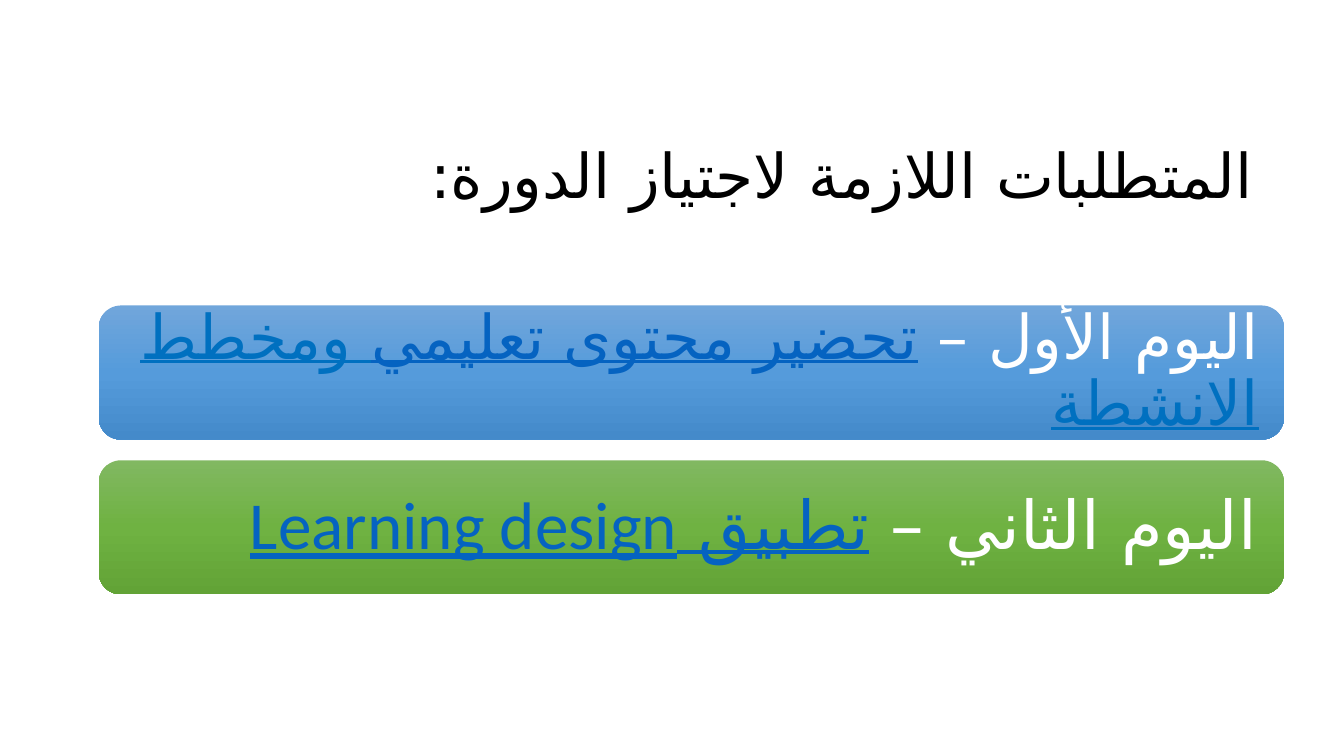
from copy import deepcopy

from pptx import Presentation
from pptx.dml.color import RGBColor
from pptx.enum.shapes import MSO_SHAPE
from pptx.enum.text import MSO_ANCHOR, PP_ALIGN
from pptx.oxml.ns import qn
from pptx.util import Pt

COLORS = {
    "black": "000000",
    "white": "FFFFFF",
    "link": "0563C1",
    "plan": "0070C0",
}
LATIN_FONT, ARABIC_FONT = "Calibri", "DejaVu Sans"
TITLE = [("المتطلبات اللازمة لاجتياز الدورة:", "black", False)]
DAYS = [
    {
        "runs": [
            ("اليوم الأول – ", "white", False),
            ("تحضير محتوى تعليمي", "link", True),
            (" ومخطط الانشطة", "plan", True),
        ],
        "size": 44,
        "inset": 13,
        "gradient": ["71A6DB", "559BDB", "448ACA"],
    },
    {
        "runs": [
            ("اليوم الثاني – ", "white", False),
            ("تطبيق Learning design", "link", True),
        ],
        "size": 48,
        "inset": 14.4,
        "gradient": ["81B861", "6FB242", "62A336"],
    },
]
BAR_LEFT, BAR_TOP, BAR_WIDTH, BAR_HEIGHT = 70.5, 218.2, 846.7, 95.8
BAR_GAP = 14.8


def write_text(box, runs, size, anchor, inset_x=7.2, inset_y=3.6):
    frame = box.text_frame
    frame.word_wrap = True
    frame.vertical_anchor = anchor
    frame.margin_left = frame.margin_right = Pt(inset_x)
    frame.margin_top = frame.margin_bottom = Pt(inset_y)
    para = frame.paragraphs[0]
    para.alignment = PP_ALIGN.RIGHT
    para.line_spacing = 0.9
    para._p.get_or_add_pPr().set("rtl", "1")
    for text, color, underline in runs:
        span = para.add_run()
        span.text = text
        span.font.size = Pt(size)
        span.font.name = LATIN_FONT
        span.font.underline = underline
        span.font.color.rgb = RGBColor.from_string(COLORS[color])
        complex_font = span._r.rPr.makeelement(qn("a:cs"), {"typeface": ARABIC_FONT})
        span._r.rPr.find(qn("a:latin")).addnext(complex_font)


def fill_gradient(bar, colors):
    bar.fill.gradient()
    bar.fill.gradient_angle = 270
    first = next(bar._element.iter(qn("a:gs")))
    first.addnext(deepcopy(first))
    for index, (stop, color) in enumerate(zip(bar.fill.gradient_stops, colors)):
        stop.position = index / (len(colors) - 1)
        stop.color.rgb = RGBColor.from_string(color)


deck = Presentation()
deck.slide_width, deck.slide_height = Pt(960), Pt(540)
page = deck.slides.add_slide(deck.slide_layouts[6])

for index, day in enumerate(DAYS):
    top = BAR_TOP + index * (BAR_HEIGHT + BAR_GAP)
    bar = page.shapes.add_shape(
        MSO_SHAPE.ROUNDED_RECTANGLE, Pt(BAR_LEFT), Pt(top), Pt(BAR_WIDTH), Pt(BAR_HEIGHT)
    )
    bar.shadow.inherit = False
    bar.line.fill.background()
    fill_gradient(bar, day["gradient"])
    write_text(bar, day["runs"], day["size"], MSO_ANCHOR.MIDDLE, day["inset"], day["inset"])

title = page.shapes.add_textbox(Pt(160.5), Pt(82.8), Pt(742.3), Pt(72))
write_text(title, TITLE, 44, MSO_ANCHOR.BOTTOM)

deck.save("out.pptx")
